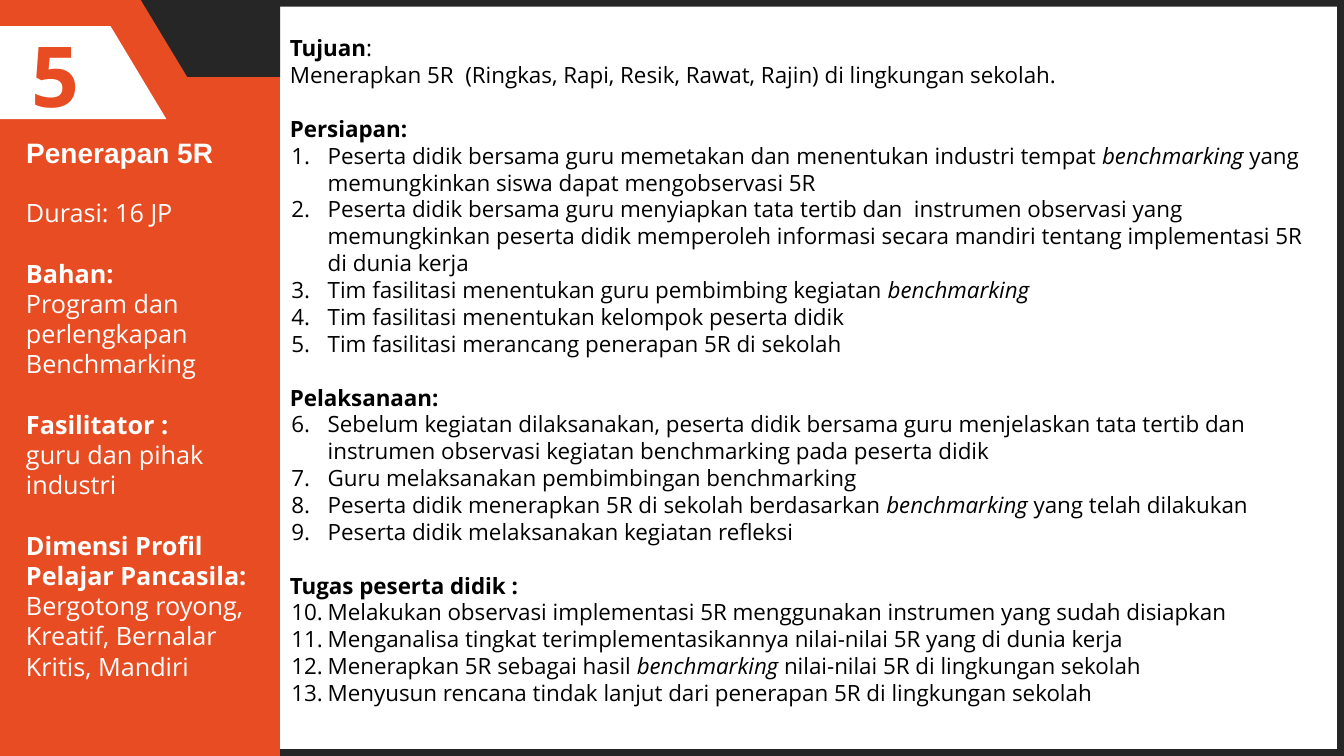
from lxml.etree import SubElement
from pptx import Presentation
from pptx.dml.color import RGBColor
from pptx.enum.shapes import MSO_SHAPE
from pptx.enum.text import MSO_ANCHOR, MSO_AUTO_SIZE, PP_ALIGN
from pptx.oxml.ns import qn
from pptx.util import Pt

ORANGE, DARK, WHITE, BLACK = "E84C22", "262626", "FFFFFF", "000000"
WIDTH, HEIGHT, SIDEBAR = 960, 540, 200


def color(value):
    return RGBColor.from_string(value)


class SlideBuilder:
    font = "Open Sans"

    def __init__(self, slide):
        self.slide = slide
        self.shapes = slide.shapes

    def paint(self, shape, fill):
        shape.shadow.inherit = False
        shape.fill.solid()
        shape.fill.fore_color.rgb = color(fill)
        shape.line.fill.background()
        return shape

    def preset(self, kind, box, fill):
        return self.paint(self.shapes.add_shape(kind, *map(Pt, box)), fill)

    def outline(self, points, fill):
        corners = [(Pt(x), Pt(y)) for x, y in points]
        builder = self.shapes.build_freeform(*corners[0])
        builder.add_line_segments(corners[1:], close=True)
        return self.paint(builder.convert_to_shape(), fill)

    def style(self, paragraph, size, fill, font=None, bold=None):
        paragraph.font.name = font or self.font
        paragraph.font.size = Pt(size)
        paragraph.font.color.rgb = color(fill)
        paragraph.font.bold = bold

    def title(self, text, box, size, fill, font):
        heading = self.shapes.title
        heading.left, heading.top, heading.width, heading.height = map(Pt, box)
        self.shapes._spTree.append(heading._element)
        frame = heading.text_frame
        frame.text = text
        frame.word_wrap = True
        frame.auto_size = MSO_AUTO_SIZE.NONE
        frame.vertical_anchor = MSO_ANCHOR.TOP
        frame.paragraphs[0].alignment = PP_ALIGN.LEFT
        self.style(frame.paragraphs[0], size, fill, font, True)

    def text(self, box):
        frame = self.shapes.add_textbox(*map(Pt, box)).text_frame
        frame.word_wrap = True
        return frame

    def paragraph(self, frame, runs, size, fill, gap=0, number=None, align=None):
        first = frame.paragraphs[0]
        paragraph = frame.add_paragraph() if first.runs else first
        paragraph.alignment = align
        paragraph.space_before = Pt(gap)
        if number:
            properties = paragraph._p.get_or_add_pPr()
            properties.set("marL", str(Pt(27)))
            properties.set("indent", str(-Pt(26)))
            SubElement(properties, qn("a:buAutoNum"), type="arabicPeriod", startAt=str(number))
        all_bold = all(emphasis == "b" for _, emphasis in runs)
        self.style(paragraph, size, fill, bold=all_bold or None)
        for words, emphasis in runs:
            run = paragraph.add_run()
            run.text = words
            if emphasis == "b" and not all_bold:
                run.font.bold = True
            if emphasis == "i":
                run.font.italic = True


DETAILS = [
    ([("Durasi: 16 JP", "")], False),
    ([("Bahan:", "b")], True),
    ([("Program dan perlengkapan Benchmarking", "")], False),
    ([("Fasilitator :", "b")], True),
    ([("guru dan pihak industri", "")], False),
    ([("Dimensi Profil Pelajar Pancasila: ", "b"),
      ("Bergotong royong, Kreatif, Bernalar Kritis, Mandiri", "")], True),
]

SECTIONS = [
    ("Persiapan:", [
        [("Peserta didik bersama guru memetakan dan menentukan industri tempat ", ""),
         ("benchmarking", "i"), (" yang memungkinkan siswa dapat mengobservasi 5R", "")],
        [("Peserta didik bersama guru menyiapkan tata tertib dan  instrumen observasi yang "
          "memungkinkan peserta didik memperoleh informasi secara mandiri tentang "
          "implementasi 5R di dunia kerja", "")],
        [("Tim fasilitasi menentukan guru pembimbing kegiatan ", ""), ("benchmarking", "i")],
        [("Tim fasilitasi menentukan kelompok peserta didik", "")],
        [("Tim fasilitasi merancang penerapan 5R di sekolah", "")],
    ]),
    ("Pelaksanaan:", [
        [("Sebelum kegiatan dilaksanakan, peserta didik bersama guru menjelaskan tata tertib dan "
          "instrumen observasi kegiatan benchmarking pada peserta didik", "")],
        [("Guru melaksanakan pembimbingan benchmarking", "")],
        [("Peserta didik menerapkan 5R di sekolah berdasarkan ", ""),
         ("benchmarking", "i"), (" yang telah dilakukan", "")],
        [("Peserta didik melaksanakan kegiatan refleksi", "")],
    ]),
    ("Tugas peserta didik :", [
        [("Melakukan observasi implementasi 5R menggunakan instrumen yang sudah disiapkan", "")],
        [("Menganalisa tingkat terimplementasikannya nilai-nilai 5R yang di dunia kerja", "")],
        [("Menerapkan 5R sebagai hasil ", ""), ("benchmarking ", "i"),
         ("nilai-nilai 5R di lingkungan sekolah", "")],
        [("Menyusun rencana tindak lanjut dari penerapan 5R di lingkungan sekolah", "")],
    ]),
]


def main():
    presentation = Presentation()
    presentation.slide_width, presentation.slide_height = Pt(WIDTH), Pt(HEIGHT)
    page = SlideBuilder(presentation.slides.add_slide(presentation.slide_layouts[5]))

    border = page.preset(MSO_SHAPE.FRAME, (0, 0, WIDTH, HEIGHT), DARK)
    border.adjustments[0] = 0.009
    page.preset(MSO_SHAPE.RECTANGLE, (0, 0, SIDEBAR, HEIGHT), ORANGE)

    page.title("Penerapan 5R", (11.5, 93, 188.5, 31), 20, WHITE, "Arial")
    details = page.text((11.5, 137.5, 188.5, 382))
    for runs, starts_group in DETAILS:
        page.paragraph(details, runs, 18, WHITE, gap=21.6 if starts_group else 0)

    page.outline([(0, 18.7), (79, 18.7), (118.8, 85), (0, 85)], WHITE)
    activity_number = page.text((0, 13, 79, 80))
    page.paragraph(activity_number, [("5", "b")], 60, ORANGE, align=PP_ALIGN.CENTER)

    activity = page.text((SIDEBAR, 21, 748, 492))
    page.paragraph(activity, [("Tujuan", "b"), (":", "")], 16, BLACK)
    purpose = "Menerapkan 5R  (Ringkas, Rapi, Resik, Rawat, Rajin) di lingkungan sekolah."
    page.paragraph(activity, [(purpose, "")], 16, BLACK)
    next_number = 1
    for heading, steps in SECTIONS:
        page.paragraph(activity, [(heading, "b")], 16, BLACK, gap=19.2)
        for step in steps:
            page.paragraph(activity, step, 16, BLACK, number=next_number)
        next_number += len(steps)

    page.outline([(SIDEBAR, 55), (133.8, 55), (100.6, 0), (SIDEBAR, 0)], DARK)
    presentation.save("out.pptx")


if __name__ == "__main__":
    main()
